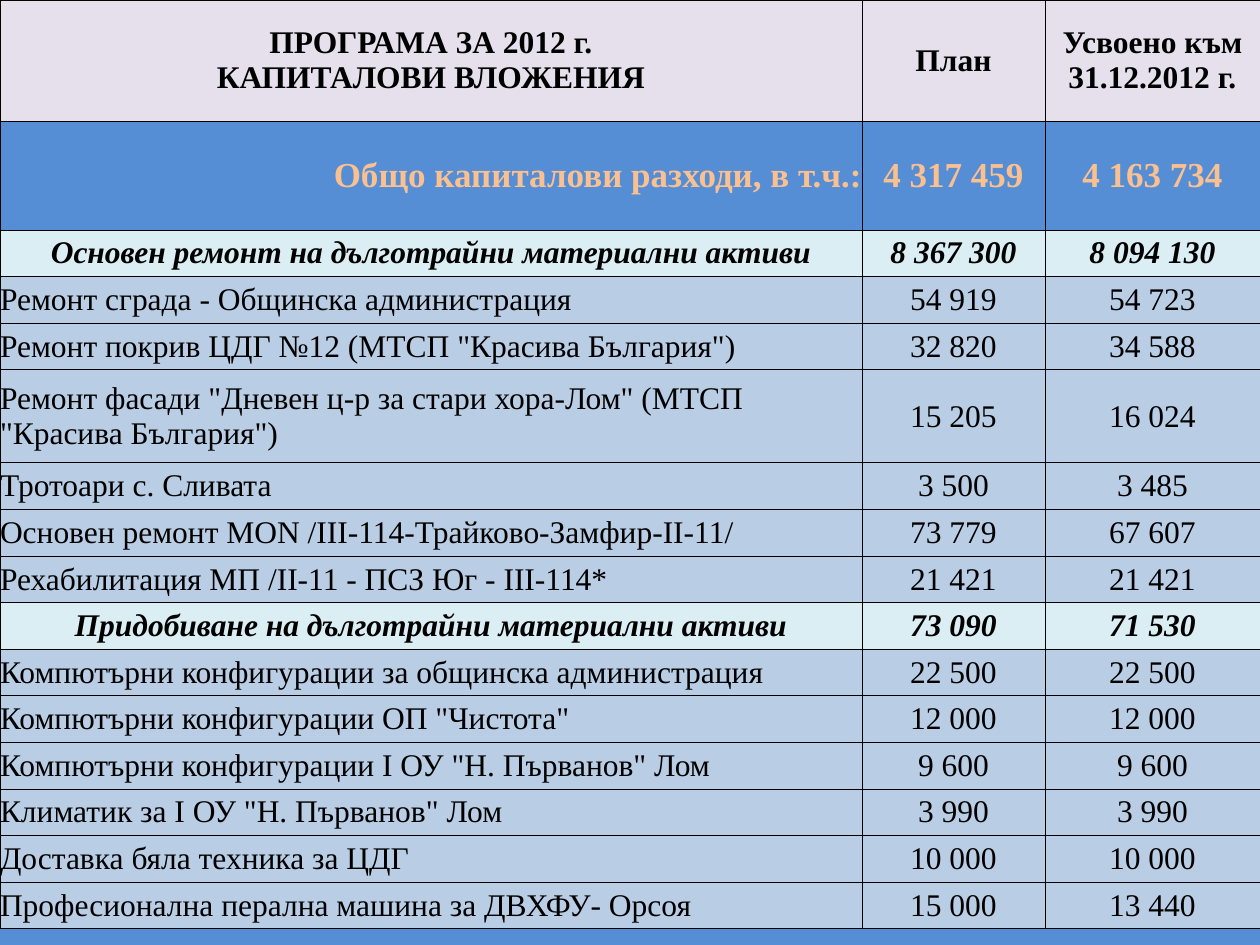
from lxml.etree import SubElement
from pptx import Presentation
from pptx.dml.color import RGBColor
from pptx.enum.text import MSO_ANCHOR, PP_ALIGN
from pptx.oxml import parse_xml
from pptx.oxml.ns import nsdecls, qn
from pptx.util import Pt

SCALE = 914400 / 126
FONT = "Times New Roman"
BLACK = RGBColor(0x00, 0x00, 0x00)
LILAC = RGBColor(0xE6, 0xE0, 0xEC)
BLUE = RGBColor(0x55, 0x8E, 0xD5)
PEACH = RGBColor(0xFA, 0xC0, 0x90)
MINT = RGBColor(0xDB, 0xEE, 0xF4)
PALE = RGBColor(0xB9, 0xCD, 0xE5)
MIST = RGBColor(0xD4, 0xDE, 0xFF)
SAGE = RGBColor(0x96, 0xAB, 0x94)
STOPS = [(9, BLUE), (47, MIST), (76, MIST), (93, SAGE)]

LEFT, MID, RIGHT = PP_ALIGN.LEFT, PP_ALIGN.CENTER, PP_ALIGN.RIGHT
STYLES = {
    "head": (LILAC, BLACK, 18, True, False, MID),
    "total": (BLUE, PEACH, 20, True, False, RIGHT),
    "group": (MINT, BLACK, 18, True, True, MID),
    "item": (PALE, BLACK, 18, False, False, LEFT),
}
COLS = [862, 183, 215]
HEAD, TOTAL, LINE = 121, 109, 46.6
ROWS = [
    ("head", HEAD, "ПРОГРАМА ЗА 2012 г.\nКАПИТАЛОВИ ВЛОЖЕНИЯ", "План", "Усвоено към 31.12.2012 г."),
    ("total", TOTAL, "Общо капиталови разходи, в т.ч.:", "4 317 459", "4 163 734"),
    ("group", LINE, "Основен ремонт на дълготрайни материални активи", "8 367 300", "8 094 130"),
    ("item", LINE, "Ремонт сграда - Общинска администрация", "54 919", "54 723"),
    ("item", LINE, 'Ремонт покрив ЦДГ №12 (МТСП "Красива България")', "32 820", "34 588"),
    ("item", 2 * LINE, 'Ремонт фасади "Дневен ц-р за стари хора-Лом" (МТСП "Красива България")',
     "15 205", "16 024"),
    ("item", LINE, "Тротоари с. Сливата", "3 500", "3 485"),
    ("item", LINE, "Основен ремонт MON /III-114-Трайково-Замфир-II-11/", "73 779", "67 607"),
    ("item", LINE, "Рехабилитация МП /II-11 - ПСЗ Юг - III-114*", "21 421", "21 421"),
    ("group", LINE, "Придобиване на дълготрайни материални активи", "73 090", "71 530"),
    ("item", LINE, "Компютърни конфигурации за общинска администрация", "22 500", "22 500"),
    ("item", LINE, 'Компютърни конфигурации ОП "Чистота"', "12 000", "12 000"),
    ("item", LINE, 'Компютърни конфигурации I ОУ "Н. Първанов" Лом', "9 600", "9 600"),
    ("item", LINE, 'Климатик за I ОУ "Н. Първанов" Лом', "3 990", "3 990"),
    ("item", LINE, "Доставка бяла техника за ЦДГ", "10 000", "10 000"),
    ("item", LINE, "Професионална перална машина за ДВХФУ- Орсоя", "15 000", "13 440"),
]


def px(n):
    return round(n * SCALE)


def paint_back(slide):
    fill = slide.background.fill
    fill.gradient()
    fill.gradient_angle = 90
    stops = next(slide.background._cSld.iter(qn("a:gsLst")))
    for old in list(stops):
        stops.remove(old)
    for place, color in STOPS:
        stop = SubElement(stops, qn("a:gs"), pos=str(place * 1000))
        SubElement(stop, qn("a:srgbClr"), val=str(color))


def add_edges(cell):
    props = cell._tc.get_or_add_tcPr()
    for i, side in enumerate("LRTB"):
        props.insert(i, parse_xml(
            f'<a:ln{side} w="{Pt(0.5)}" {nsdecls("a")}><a:solidFill>'
            f'<a:srgbClr val="{BLACK}"/></a:solidFill></a:ln{side}>'))


def fill_cell(cell, text, style, first):
    back, ink, size, bold, slant, align = style
    cell.text = text
    cell.vertical_anchor = MSO_ANCHOR.MIDDLE
    cell.margin_left = cell.margin_right = cell.margin_top = cell.margin_bottom = 0
    cell.fill.solid()
    cell.fill.fore_color.rgb = back
    add_edges(cell)
    for para in cell.text_frame.paragraphs:
        para.alignment = align if first else MID
        font = para.font
        font.name, font.size = FONT, Pt(size)
        font.bold, font.italic = bold, slant
        font.color.rgb = ink


def add_budget(slide, x, y, w, h):
    table = slide.shapes.add_table(
        len(ROWS), len(COLS), px(x), px(y), px(w), px(h)).table
    for col, width in zip(table.columns, COLS):
        col.width = px(width * w / sum(COLS))
    full = sum(row[1] for row in ROWS)
    for r, (kind, high, *texts) in enumerate(ROWS):
        table.rows[r].height = px(high * h / full)
        for c, text in enumerate(texts):
            fill_cell(table.cell(r, c), text, STYLES[kind], c == 0)


def main():
    deck = Presentation()
    deck.slide_width, deck.slide_height = px(1260), px(945)
    slide = deck.slides.add_slide(deck.slide_layouts[6])
    paint_back(slide)
    add_budget(slide, 0, 0, 1260, 929)
    deck.save("out.pptx")


if __name__ == "__main__":
    main()
